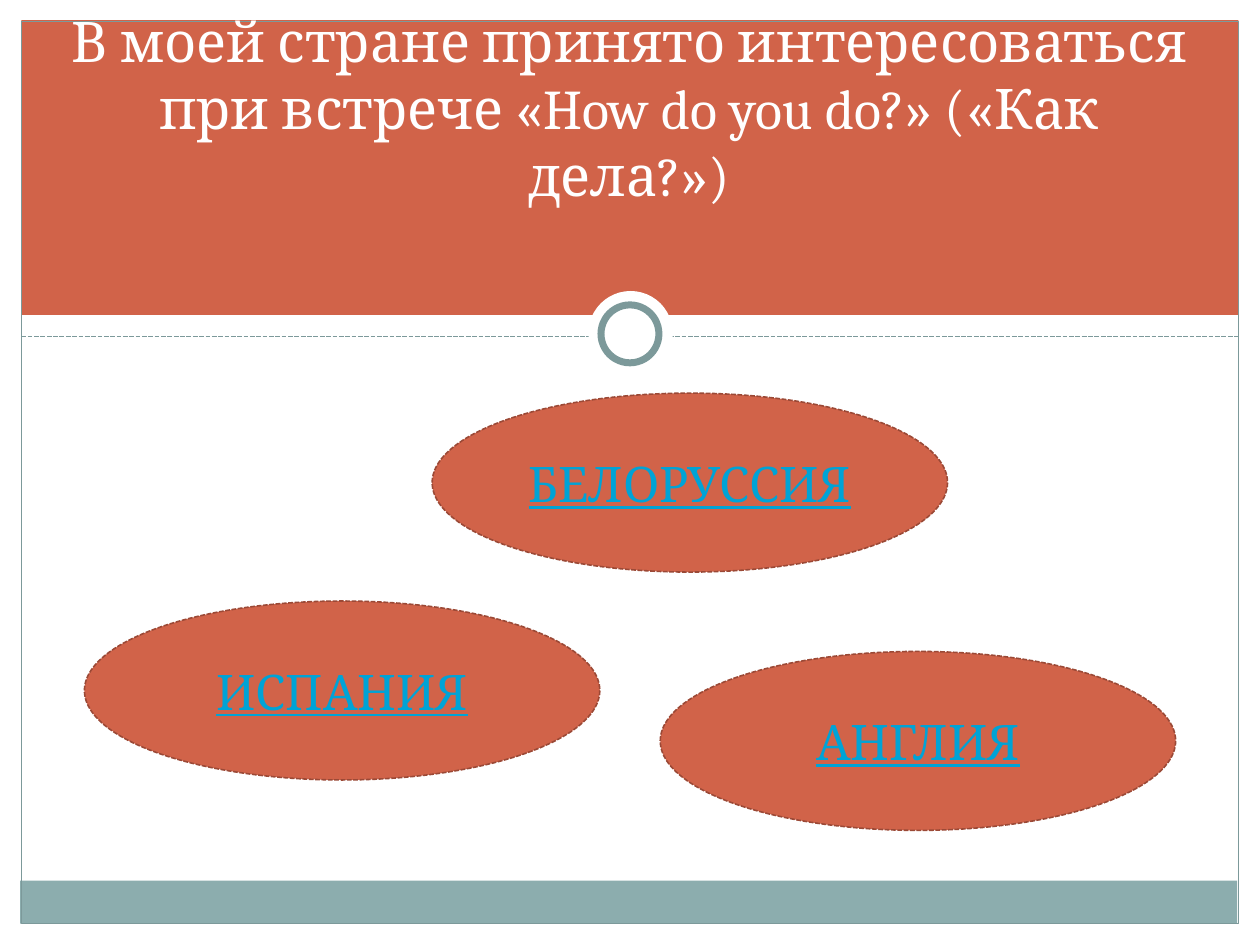
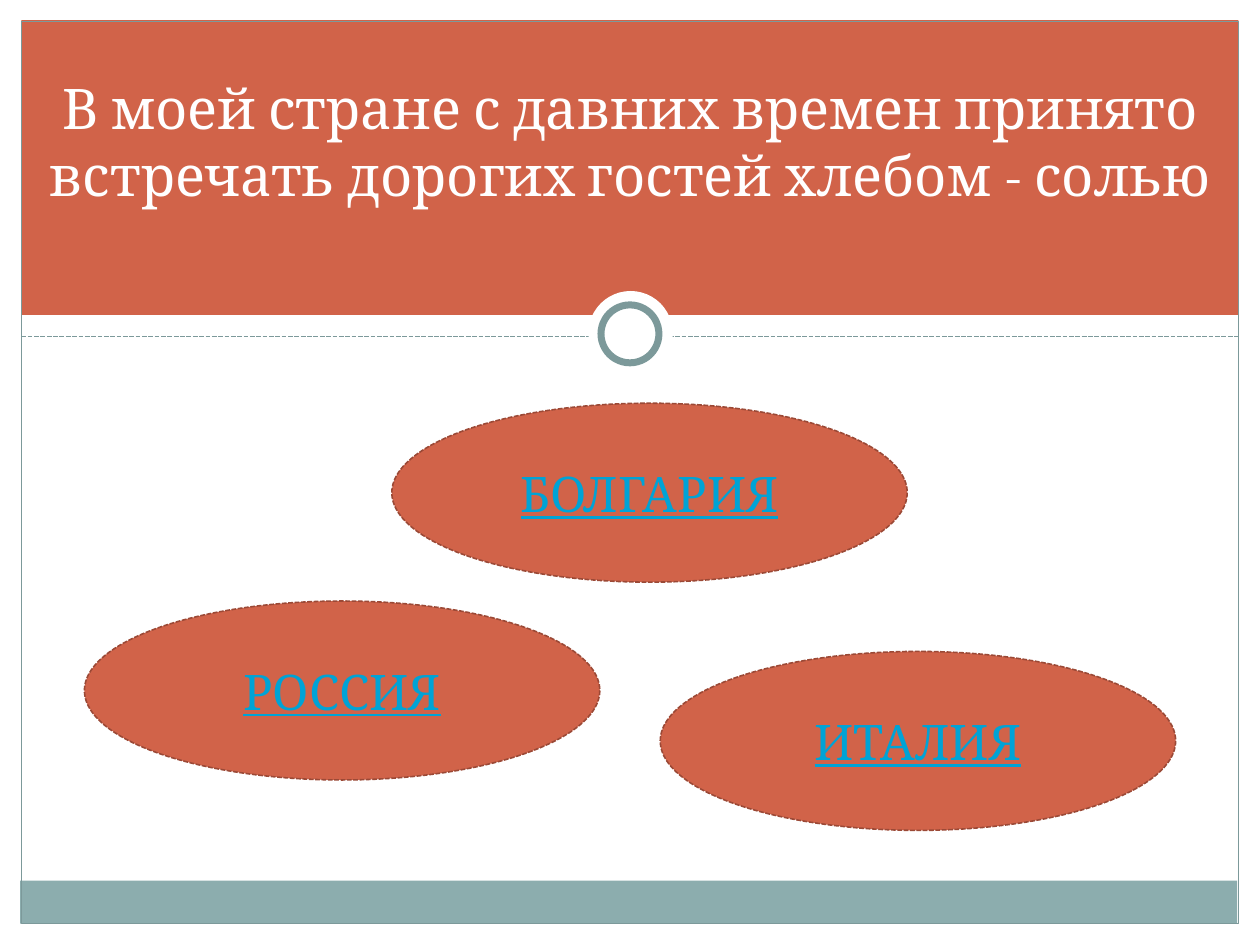
from typing import NamedTuple

from lxml.etree import SubElement
from pptx import Presentation
from pptx.dml.color import RGBColor
from pptx.enum.dml import MSO_LINE
from pptx.enum.shapes import MSO_CONNECTOR, MSO_SHAPE
from pptx.enum.text import MSO_ANCHOR, MSO_AUTO_SIZE, PP_ALIGN
from pptx.oxml.ns import qn
from pptx.util import Emu, Pt

PX = 9144  # 100 px to the inch
WHITE, CORAL, TEAL = "FFFFFF", "D16349", "8CADAE"
SLATE, RUST, LINK_BLUE = "7C999A", "9B4936", "00A3D6"

TITLE_FONT = {"name": "Cambria", "size": Pt(32), "bold": False}
COUNTRY_FONT = {"name": "Cambria", "size": Pt(28), "underline": True}
TITLE_FRAME = {"word_wrap": True, "auto_size": MSO_AUTO_SIZE.NONE,
               "vertical_anchor": MSO_ANCHOR.BOTTOM}
COUNTRY_FRAME = {"word_wrap": True, "vertical_anchor": MSO_ANCHOR.MIDDLE}
TITLE_TOP, TITLE_HEIGHT = 21, 149
OVAL_WIDTH, OVAL_HEIGHT = 409, 142
DIVIDER_Y, FRAME_LEFT, FRAME_RIGHT = 267, 17, 983


class Box(NamedTuple):
    left: int
    top: int
    width: int
    height: int


class Stroke(NamedTuple):
    color: str
    points: float
    dashed: bool = False


class Part(NamedTuple):
    box: Box
    fill: str | None = None
    stroke: Stroke | None = None
    preset: MSO_SHAPE = MSO_SHAPE.RECTANGLE


class Country(NamedTuple):
    name: str
    left: int
    top: int


class Question(NamedTuple):
    title: str
    title_left: int
    title_width: int
    countries: list[Country]


DIVIDER_STROKE = Stroke(SLATE, 0.9, dashed=True)
OVAL_STROKE = Stroke(RUST, 0.9, dashed=True)

BACKDROP = [
    Part(Box(0, 733, 1000, 17), WHITE),
    Part(Box(0, 0, 1000, 17), WHITE),
    Part(Box(983, 2, 17, 748), WHITE),
    Part(Box(17, 250, 966, 33), WHITE),
    Part(Box(17, 16, 966, 234), CORAL),
    Part(Box(16, 699, 966, 34), TEAL),
    Part(Box(17, 17, 966, 716), stroke=Stroke(SLATE, 0.75)),
]
RING = [
    Part(Box(467, 231, 67, 67), WHITE, preset=MSO_SHAPE.OVAL),
    Part(Box(477, 242, 46, 46), WHITE, Stroke(SLATE, 4), MSO_SHAPE.OVAL),
]

QUESTIONS = [
    Question(
        "В моей стране принято интересоваться при встрече "
        "«How do you do?» («Как дела?»)", 35, 929,
        [Country("БЕЛОРУССИЯ", 343, 312),
         Country("ИСПАНИЯ", 67, 477),
         Country("АНГЛИЯ", 524, 517)]),
    Question(
        "В моей стране с давних времен принято встречать дорогих гостей "
        "хлебом - солью", 20, 961,
        [Country("РОССИЯ", 67, 477),
         Country("БОЛГАРИЯ", 311, 320),
         Country("ИТАЛИЯ", 524, 517)]),
]


def px(length: int) -> Emu:
    return Emu(length * PX)


def rgb(color: str) -> RGBColor:
    return RGBColor.from_string(color)


def set_all(target, values: dict) -> None:
    for attribute, value in values.items():
        setattr(target, attribute, value)


def apply_stroke(line, stroke: Stroke) -> None:
    line.color.rgb = rgb(stroke.color)
    line.width = Pt(stroke.points)
    if stroke.dashed:
        line.dash_style = MSO_LINE.SQUARE_DOT


def draw_part(slide, part: Part):
    shape = slide.shapes.add_shape(part.preset, *map(px, part.box))
    shape.shadow.inherit = False
    if part.fill:
        shape.fill.solid()
        shape.fill.fore_color.rgb = rgb(part.fill)
    else:
        shape.fill.background()
    if part.stroke:
        apply_stroke(shape.line, part.stroke)
    else:
        shape.line.fill.background()
    return shape


def write_text(shape, text: str, frame_format: dict, font_format: dict,
               color: str) -> None:
    frame = shape.text_frame
    frame.text = text
    set_all(frame, frame_format)
    paragraph = frame.paragraphs[0]
    paragraph.alignment = PP_ALIGN.CENTER
    font = paragraph.runs[0].font
    set_all(font, font_format)
    font.color.rgb = rgb(color)


def draw_divider(slide) -> None:
    divider = slide.shapes.add_connector(
        MSO_CONNECTOR.STRAIGHT, px(FRAME_LEFT), px(DIVIDER_Y),
        px(FRAME_RIGHT), px(DIVIDER_Y))
    apply_stroke(divider.line, DIVIDER_STROKE)
    SubElement(divider._element.spPr, qn("a:effectLst"))


def draw_backdrop(slide) -> None:
    for part in BACKDROP:
        draw_part(slide, part)
    draw_divider(slide)
    for part in RING:
        draw_part(slide, part)


def place_title(slide, question: Question) -> None:
    """Format the title and lift it above the backdrop."""
    title = slide.shapes.title
    set_all(title, {"left": px(question.title_left), "top": px(TITLE_TOP),
                    "width": px(question.title_width),
                    "height": px(TITLE_HEIGHT)})
    write_text(title, question.title, TITLE_FRAME, TITLE_FONT, WHITE)
    slide.shapes._spTree.append(title._element)


def draw_country(slide, country: Country) -> None:
    box = Box(country.left, country.top, OVAL_WIDTH, OVAL_HEIGHT)
    oval = draw_part(slide, Part(box, CORAL, OVAL_STROKE, MSO_SHAPE.OVAL))
    write_text(oval, country.name, COUNTRY_FRAME, COUNTRY_FONT, LINK_BLUE)


def main() -> None:
    deck = Presentation()
    set_all(deck, {"slide_width": px(1000), "slide_height": px(750)})
    title_only = deck.slide_layouts.get_by_name("Title Only")
    for question in QUESTIONS:
        slide = deck.slides.add_slide(title_only)
        draw_backdrop(slide)
        place_title(slide, question)
        for country in question.countries:
            draw_country(slide, country)
    deck.save("out.pptx")


if __name__ == "__main__":
    main()
